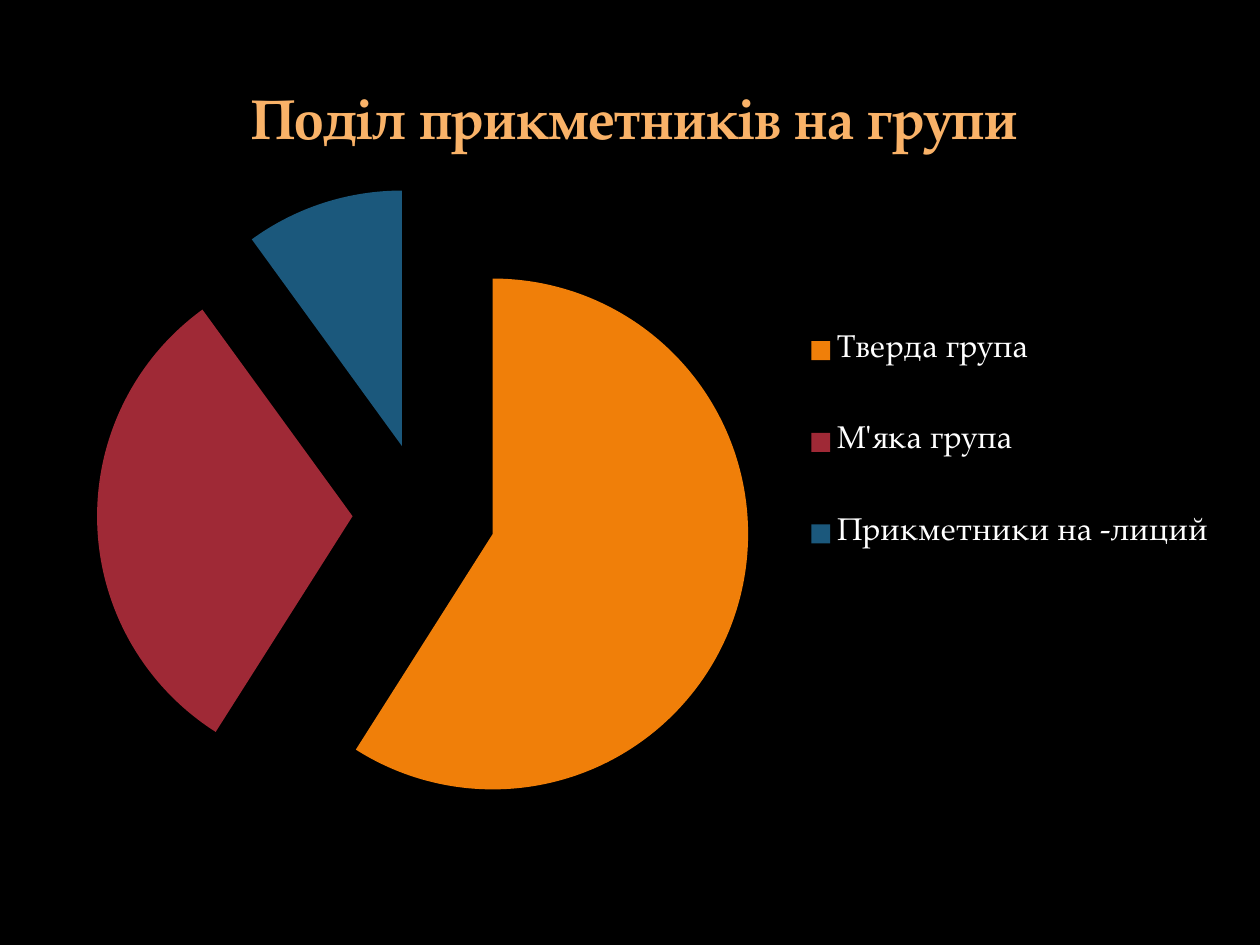
"""Build a slide with an exploded pie chart of adjective groups."""
from lxml.etree import SubElement
from pptx import Presentation
from pptx.chart.data import CategoryChartData
from pptx.dml.color import RGBColor
from pptx.enum.chart import XL_CHART_TYPE as ChartType, XL_LEGEND_POSITION as LegendPos
from pptx.oxml import parse_xml
from pptx.oxml.ns import nsdecls, qn
from pptx.util import Inches, Pt

BLACK = RGBColor(0x00, 0x00, 0x00)
WHITE = RGBColor(0xFF, 0xFF, 0xFF)
PEACH = RGBColor(0xF9, 0xB2, 0x68)
ORANGE = RGBColor(0xF0, 0x7F, 0x09)
RED = RGBColor(0x9F, 0x29, 0x36)
BLUE = RGBColor(0x1B, 0x58, 0x7C)
FONT = "TeX Gyre Pagella"
TITLE = "Поділ прикметників на групи"
GROUPS = [
    ("Тверда група", 59, ORANGE),
    ("М'яка група", 31, RED),
    ("Прикметники на -лиций", 10, BLUE),
]


def make_layout(x, y, w, h, inner=False):
    layout = parse_xml(f"<c:layout {nsdecls('c')}><c:manualLayout/></c:layout>")
    values = [("xMode", "edge"), ("yMode", "edge"), ("x", x), ("y", y), ("w", w), ("h", h)]
    if inner:
        values.insert(0, ("layoutTarget", "inner"))
    for name, value in values:
        SubElement(layout[0], qn(f"c:{name}")).set("val", str(value))
    return layout


prs = Presentation()
prs.slide_width, prs.slide_height = Inches(10), Inches(7.5)
W, H = prs.slide_width, prs.slide_height
s = prs.slides.add_slide(prs.slide_layouts[6])
s.background.fill.solid()
s.background.fill.fore_color.rgb = BLACK

data = CategoryChartData()
data.categories = [name for name, _, _ in GROUPS]
data.add_series(TITLE, [value for _, value, _ in GROUPS])
frame = s.shapes.add_chart(
    ChartType.PIE, int(W * 0.039), int(H * 0.063), int(W * 0.93), int(H * 0.844), data
)
chart = frame.chart
chart.font.name = FONT
chart.font.size = Pt(18)
chart.font.color.rgb = WHITE

chart.has_title = True
chart.chart_title.include_in_layout = False
p = chart.chart_title.text_frame.paragraphs[0]
r = p.add_run()
r.text = TITLE
for font in (p.font, r.font):
    font.name = FONT
    font.size = Pt(32)
    font.bold = True
    font.color.rgb = PEACH

chart.has_legend = True
legend = chart.legend
legend.position = LegendPos.RIGHT
legend.include_in_layout = False
legend.font.name = FONT
legend.font.size = Pt(18)
legend.font.color.rgb = WHITE
legend._element.find(qn("c:legendPos")).addnext(make_layout(0.64, 0.27, 0.36, 0.42))

plot = chart.plots[0]
plot.vary_by_categories = True
series = plot.series[0]
for i, (_, _, color) in enumerate(GROUPS):
    fill = series.points[i].format.fill
    fill.solid()
    fill.fore_color.rgb = color
explosion = parse_xml(f'<c:explosion {nsdecls("c")} val="28"/>')
series._element.find(qn("c:dPt")).addprevious(explosion)

area = chart._chartSpace.chart.plotArea
for old in area.findall(qn("c:layout")):
    area.remove(old)
area.insert(0, make_layout(0.04, 0.16, 0.56, 0.82, inner=True))

prs.save("out.pptx")
